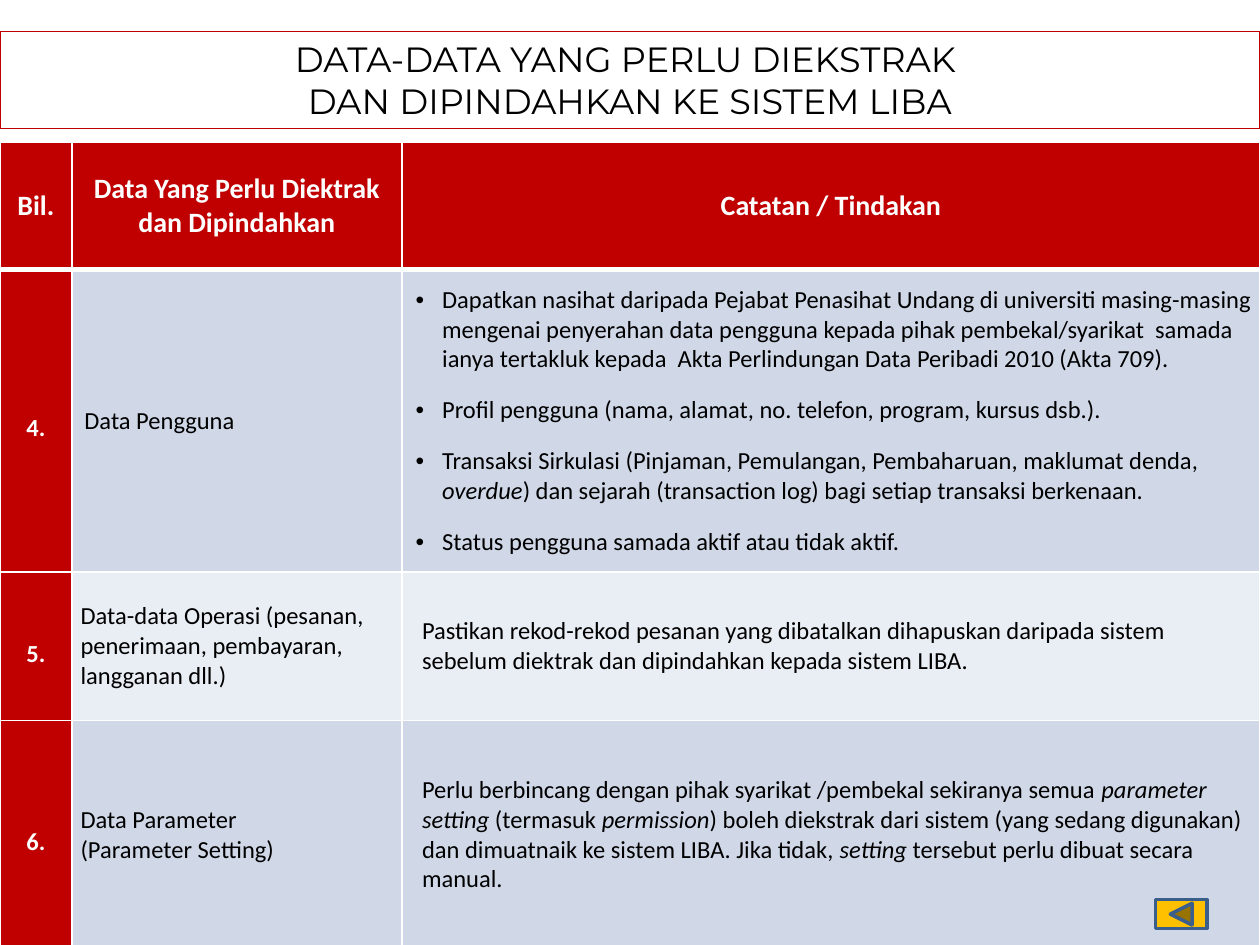
from dataclasses import dataclass
from typing import Optional

from lxml.etree import SubElement
from pptx import Presentation
from pptx.dml.color import RGBColor
from pptx.enum.shapes import MSO_SHAPE
from pptx.enum.text import MSO_ANCHOR, PP_ALIGN
from pptx.oxml.ns import qn
from pptx.util import Inches, Pt

COLOURS = {
    "red": "C00000",
    "white": "FFFFFF",
    "black": "000000",
    "band_dark": "D0D8E8",
    "band_light": "E9EDF4",
    "button": "FFC000",
    "button_line": "3A5F8C",
}
COLUMN_WIDTHS = [0.57, 2.62, 6.81]
ROW_HEIGHTS = [1.01, 2.4, 1.18, 1.81]
HEADERS = ["Bil.", "Data Yang Perlu Diektrak dan Dipindahkan", "Catatan / Tindakan"]


@dataclass
class CellStyle:
    fill: str
    colour: str = "black"
    size: int = 14
    bold: bool = False
    centred: bool = False
    inset: float = 0.07
    right_inset: float = 0.07
    indent: float = 0
    bulleted: bool = False
    spacing: int = 6
    line_spacing: Optional[float] = None
    bottom_border: int = 1


@dataclass
class DataRow:
    number: str
    name: str
    notes: list[str]  # asterisks enclose italic words
    band: str
    bulleted: bool = False
    name_inset: float = 0.07


DATA_ROWS = [
    DataRow("4.", "Data Pengguna", [
        "Dapatkan nasihat daripada Pejabat Penasihat Undang di universiti masing-masing "
        "mengenai penyerahan data pengguna kepada pihak pembekal/syarikat  samada ianya "
        "tertakluk kepada  Akta Perlindungan Data Peribadi 2010 (Akta 709).",
        "Profil pengguna (nama, alamat, no. telefon, program, kursus dsb.).",
        "Transaksi Sirkulasi (Pinjaman, Pemulangan, Pembaharuan, maklumat denda, "
        "*overdue*) dan sejarah (transaction log) bagi setiap transaksi berkenaan.",
        "Status pengguna samada aktif atau tidak aktif.",
    ], "band_dark", bulleted=True, name_inset=0.1),
    DataRow("5.", "Data-data Operasi (pesanan, penerimaan, pembayaran, langganan dll.)", [
        "Pastikan rekod-rekod pesanan yang dibatalkan dihapuskan daripada sistem "
        "sebelum diektrak dan dipindahkan kepada sistem LIBA.",
    ], "band_light"),
    DataRow("6.", "Data Parameter\v(Parameter Setting)", [
        "Perlu berbincang dengan pihak syarikat /pembekal sekiranya semua *parameter "
        "setting* (termasuk *permission*) boleh diekstrak dari sistem (yang sedang "
        "digunakan) dan dimuatnaik ke sistem LIBA. Jika tidak, *setting* tersebut "
        "perlu dibuat secara manual.",
    ], "band_dark"),
]


def rgb(name: str) -> RGBColor:
    return RGBColor.from_string(COLOURS[name])


def set_font(run, font_name: str, size: int, colour: str, bold: bool = False) -> None:
    run.font.name = font_name
    run.font.size = Pt(size)
    run.font.color.rgb = rgb(colour)
    run.font.bold = bold


def set_borders(cell, bottom_width: int) -> None:
    properties = cell._tc.get_or_add_tcPr()
    sides = {"a:lnL": 1, "a:lnR": 1, "a:lnT": 1, "a:lnB": bottom_width}
    for position, (tag, width) in enumerate(sides.items()):
        line = SubElement(properties, qn(tag), w=str(Pt(width)))
        fill = SubElement(line, qn("a:solidFill"))
        SubElement(fill, qn("a:srgbClr"), val=COLOURS["white"])
        properties.insert(position, line)  # borders precede the fill


def set_indent(paragraph, left: float, bulleted: bool) -> None:
    properties = paragraph._p.get_or_add_pPr()
    properties.set("marL", str(Inches(left)))
    properties.set("indent", str(Inches(-0.21 if bulleted else 0)))
    if bulleted:
        SubElement(properties, qn("a:buFont"), typeface="Arial")
        SubElement(properties, qn("a:buChar"), char="•")


def fill_cell(cell, texts: list[str], style: CellStyle) -> None:
    cell.fill.solid()
    cell.fill.fore_color.rgb = rgb(style.fill)
    set_borders(cell, style.bottom_border)
    cell.vertical_anchor = MSO_ANCHOR.MIDDLE
    cell.margin_left = Inches(style.inset)
    cell.margin_right = Inches(style.right_inset)
    cell.margin_top = cell.margin_bottom = 0
    for index, text in enumerate(texts):
        frame = cell.text_frame
        paragraph = frame.add_paragraph() if index else frame.paragraphs[0]
        paragraph.alignment = PP_ALIGN.CENTER if style.centred else PP_ALIGN.LEFT
        paragraph.space_before = paragraph.space_after = Pt(style.spacing)
        if style.line_spacing:
            paragraph.line_spacing = style.line_spacing
        set_indent(paragraph, style.indent, style.bulleted)
        if "*" not in text:
            paragraph.text = text
        else:
            for part, words in enumerate(text.split("*")):
                run = paragraph.add_run()
                run.text = words
                run.font.italic = part % 2 == 1
        for run in paragraph.runs:
            set_font(run, "Calibri", style.size, style.colour, style.bold)


def add_data_table(slide) -> None:
    table = slide.shapes.add_table(
        len(ROW_HEIGHTS), len(COLUMN_WIDTHS),
        Inches(0), Inches(1.13), Inches(10), Inches(sum(ROW_HEIGHTS))).table
    for column, width in zip(table.columns, COLUMN_WIDTHS):
        column.width = Inches(width)
    for row, height in zip(table.rows, ROW_HEIGHTS):
        row.height = Inches(height)

    header = CellStyle("red", "white", 16, True, True, 0.02, 0.02, bottom_border=3)
    for column, text in enumerate(HEADERS):
        fill_cell(table.cell(0, column), [text], header)

    for index, row in enumerate(DATA_ROWS, start=1):
        number = CellStyle("red", "white", bold=True, centred=True, line_spacing=1.5,
                           spacing=0 if row.bulleted else 6)
        name = CellStyle(row.band, inset=row.name_inset,
                         spacing=0 if row.bulleted else 6)
        margin = 0.02 if row.bulleted else 0.07
        notes = CellStyle(row.band, inset=margin, right_inset=margin,
                          indent=0.3 if row.bulleted else 0.09, bulleted=row.bulleted)
        fill_cell(table.cell(index, 0), [row.number], number)
        fill_cell(table.cell(index, 1), [row.name], name)
        fill_cell(table.cell(index, 2), row.notes, notes)


def add_title(slide) -> None:
    shape = slide.shapes.add_shape(
        MSO_SHAPE.RECTANGLE, Inches(0), Inches(0.25), Inches(10), Inches(0.77))
    shape.shadow.inherit = False
    shape.fill.background()
    shape.line.color.rgb = rgb("red")
    shape.line.width = Pt(0.75)
    frame = shape.text_frame
    frame.word_wrap = True
    frame.vertical_anchor = MSO_ANCHOR.TOP
    frame.text = "DATA-DATA YANG PERLU DIEKSTRAK \nDAN DIPINDAHKAN KE SISTEM LIBA"
    for paragraph in frame.paragraphs:
        paragraph.alignment = PP_ALIGN.CENTER
        for run in paragraph.runs:
            set_font(run, "Montserrat", 20, "black")


def add_back_button(slide) -> None:
    button = slide.shapes.add_shape(
        MSO_SHAPE.ACTION_BUTTON_BACK_OR_PREVIOUS,
        Inches(9.17), Inches(7.14), Inches(0.41), Inches(0.23))
    button.shadow.inherit = False
    button.fill.solid()
    button.fill.fore_color.rgb = rgb("button")
    button.line.color.rgb = rgb("button_line")
    button.line.width = Pt(2)


def main() -> None:
    presentation = Presentation()
    presentation.slide_width, presentation.slide_height = Inches(10), Inches(7.5)
    slide = presentation.slides.add_slide(presentation.slide_layouts[6])
    add_data_table(slide)
    add_title(slide)
    add_back_button(slide)
    presentation.save("out.pptx")


if __name__ == "__main__":
    main()
